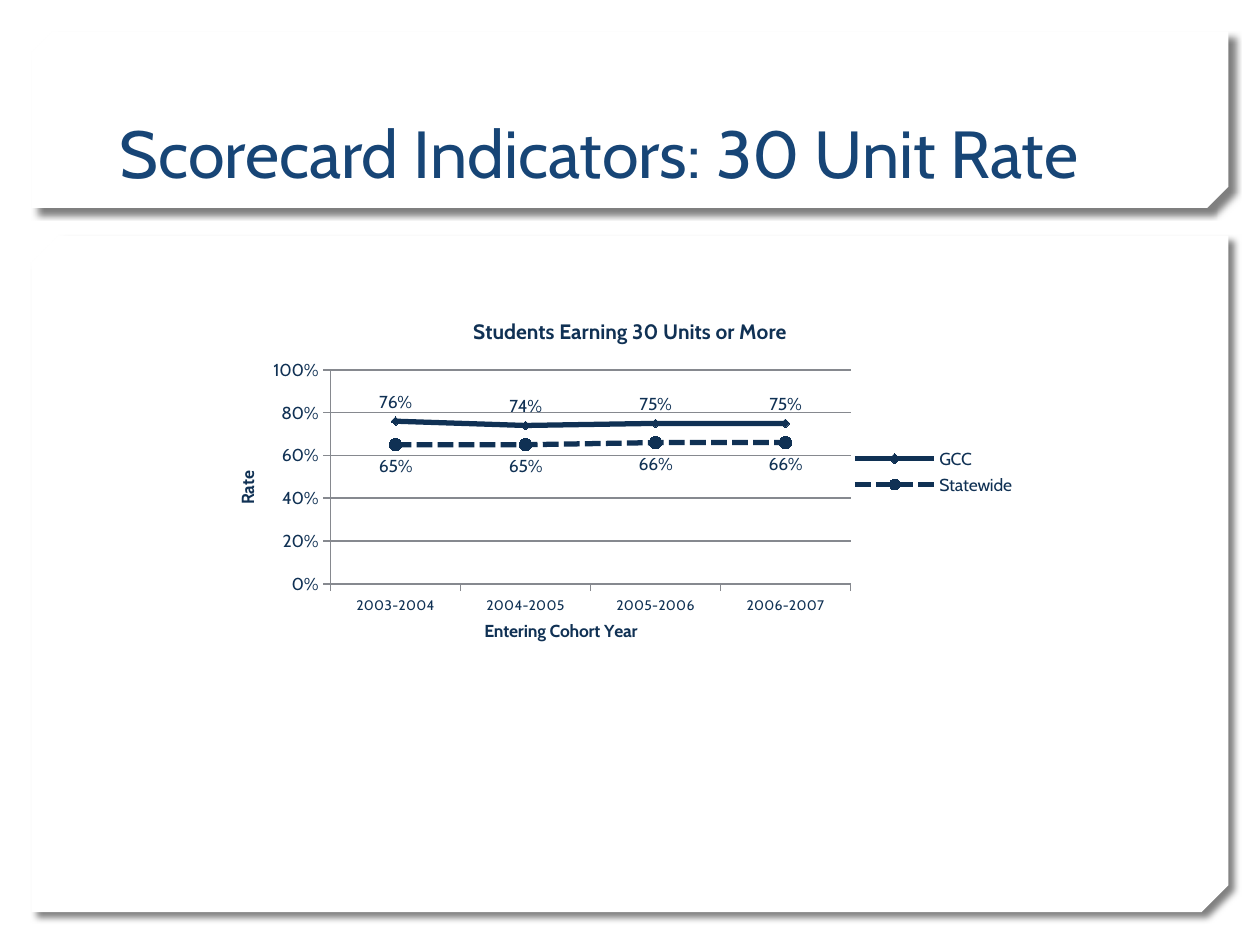
from dataclasses import dataclass

from pptx import Presentation
from pptx.chart.data import CategoryChartData
from pptx.dml.color import RGBColor
from pptx.enum.chart import (XL_CHART_TYPE, XL_LABEL_POSITION, XL_LEGEND_POSITION,
                             XL_MARKER_STYLE, XL_TICK_MARK)
from pptx.enum.dml import MSO_LINE
from pptx.enum.shapes import MSO_SHAPE
from pptx.enum.text import MSO_ANCHOR
from pptx.oxml import parse_xml
from pptx.oxml.ns import nsdecls, qn
from pptx.util import Inches, Pt


@dataclass(frozen=True)
class Theme:
    font: str = "Cabin"
    title: RGBColor = RGBColor(0x17, 0x45, 0x76)
    ink: RGBColor = RGBColor(0x10, 0x31, 0x54)
    grid: RGBColor = RGBColor(0x86, 0x89, 0x8F)
    panel: RGBColor = RGBColor(0xFF, 0xFF, 0xFF)
    title_size: int = 38
    chart_title_size: int = 12
    chart_size: int = 10
    category_size: int = 8


@dataclass(frozen=True)
class Panel:
    top: float
    height: float
    snip: float


@dataclass(frozen=True)
class RateSeries:
    name: str
    rates: tuple[float, ...]
    marker: XL_MARKER_STYLE
    marker_size: int
    dash: MSO_LINE
    label_position: XL_LABEL_POSITION


THEME = Theme()
PANELS = [Panel(1.87, 5.37, 0.04), Panel(0.25, 1.4, 0.12)]
YEARS = ["2003-2004", "2004-2005", "2005-2006", "2006-2007"]
SERIES = [
    RateSeries("GCC", (0.76, 0.74, 0.75, 0.75), XL_MARKER_STYLE.DIAMOND, 5,
               MSO_LINE.SOLID, XL_LABEL_POSITION.ABOVE),
    RateSeries("Statewide", (0.65, 0.65, 0.66, 0.66), XL_MARKER_STYLE.CIRCLE, 7,
               MSO_LINE.SQUARE_DOT, XL_LABEL_POSITION.BELOW),
]


def style_font(font, size: float, color: RGBColor, bold: bool = False) -> None:
    font.name = THEME.font
    font.size = Pt(size)
    font.bold = bold
    font.color.rgb = color


def write_text(frame, text: str, *, size: float, color: RGBColor, bold: bool = False) -> None:
    span = frame.paragraphs[0].add_run()
    span.text = text
    style_font(span.font, size, color, bold)


def style_line(line) -> None:
    line.color.rgb = THEME.grid
    line.width = Pt(1)


def add_panel(slide, panel: Panel) -> None:
    box = slide.shapes.add_shape(MSO_SHAPE.SNIP_2_DIAG_RECTANGLE, Inches(0.25),
                                 Inches(panel.top), Inches(9.5), Inches(panel.height))
    box.adjustments[0] = 0
    box.adjustments[1] = panel.snip
    box.fill.solid()
    box.fill.fore_color.rgb = THEME.panel
    box.line.fill.background()
    properties = box._element.spPr
    properties.find(qn("a:xfrm")).set("flipV", "1")
    # Soft shadow towards the lower right
    properties.append(parse_xml(
        f'<a:effectLst {nsdecls("a")}><a:outerShdw blurRad="{Pt(4)}" dist="{Pt(5)}" '
        'dir="2700000" algn="tl" rotWithShape="0"><a:srgbClr val="000000">'
        '<a:alpha val="50000"/></a:srgbClr></a:outerShdw></a:effectLst>'))


def place(element, index: int, **fractions: float) -> None:
    """Position a chart part by fractions of the chart area."""
    old = element.find(qn("c:layout"))
    if old is not None:
        element.remove(old)
    target = '<c:layoutTarget val="inner"/>' if "w" in fractions else ""
    modes = '<c:xMode val="edge"/><c:yMode val="edge"/>'
    values = "".join(f'<c:{key} val="{value}"/>' for key, value in fractions.items())
    element.insert(index, parse_xml(
        f'<c:layout {nsdecls("c")}><c:manualLayout>{target}{modes}{values}'
        '</c:manualLayout></c:layout>'))


def style_axis(axis, title: str, size: float, x: float, y: float) -> None:
    write_text(axis.axis_title.text_frame, title, size=THEME.chart_size,
               color=THEME.ink, bold=True)
    place(axis.axis_title._element, 1, x=x, y=y)
    axis.major_tick_mark = XL_TICK_MARK.OUTSIDE
    axis.minor_tick_mark = XL_TICK_MARK.NONE
    style_line(axis.format.line)
    style_font(axis.tick_labels.font, size, THEME.ink)


def style_series(series, spec: RateSeries) -> None:
    series.smooth = False
    series.format.line.color.rgb = THEME.ink
    series.format.line.width = Pt(3)
    series.format.line.dash_style = spec.dash
    marker = series.marker
    marker.style = spec.marker
    marker.size = spec.marker_size
    marker.format.fill.solid()
    marker.format.fill.fore_color.rgb = THEME.ink
    marker.format.line.color.rgb = THEME.ink
    labels = series.data_labels
    labels.show_value = True
    labels.number_format = "0%"
    labels.number_format_is_linked = False
    labels.position = spec.label_position
    style_font(labels.font, THEME.chart_size, THEME.ink)


def add_rate_chart(slide) -> None:
    data = CategoryChartData(number_format="0%")
    data.categories = YEARS
    for spec in SERIES:
        data.add_series(spec.name, spec.rates)
    chart = slide.shapes.add_chart(XL_CHART_TYPE.LINE_MARKERS, Inches(1.84), Inches(2.38),
                                   Inches(6.32), Inches(2.75), data).chart
    style_font(chart.font, THEME.chart_size, THEME.ink)
    write_text(chart.chart_title.text_frame, "Students Earning 30 Units or More",
               size=THEME.chart_title_size, color=THEME.ink, bold=True)

    # Legend and plot area
    chart.has_legend = True
    chart.legend.position = XL_LEGEND_POSITION.RIGHT
    chart.legend.include_in_layout = False
    style_font(chart.legend.font, THEME.chart_size, THEME.ink)
    plot = chart.plots[0]
    plot.vary_by_categories = False
    place(plot._element.getparent(), 0, x=0.124, y=0.204, w=0.653, h=0.622)

    # Axes
    style_axis(chart.category_axis, "Entering Cohort Year", THEME.category_size, 0.313, 0.917)
    rate_axis = chart.value_axis
    style_axis(rate_axis, "Rate", THEME.chart_size, 0, 0.49)
    rate_axis.minimum_scale = 0
    rate_axis.maximum_scale = 1
    rate_axis.major_unit = 0.2
    rate_axis.tick_labels.number_format = "0%"
    rate_axis.tick_labels.number_format_is_linked = False
    rate_axis.has_major_gridlines = True
    style_line(rate_axis.major_gridlines.format.line)

    for series, spec in zip(plot.series, SERIES):
        style_series(series, spec)


def main() -> None:
    deck = Presentation()
    deck.slide_width, deck.slide_height = Inches(10), Inches(7.5)
    slide = deck.slides.add_slide(deck.slide_layouts[6])

    # Background panels
    for panel in PANELS:
        add_panel(slide, panel)

    # Slide title
    box = slide.shapes.add_textbox(Inches(0.85), Inches(0.32), Inches(8.29), Inches(1.25))
    box.text_frame.word_wrap = True
    box.text_frame.vertical_anchor = MSO_ANCHOR.BOTTOM
    write_text(box.text_frame, "Scorecard Indicators: 30 Unit Rate",
               size=THEME.title_size, color=THEME.title)

    add_rate_chart(slide)
    deck.save("out.pptx")


if __name__ == "__main__":
    main()
